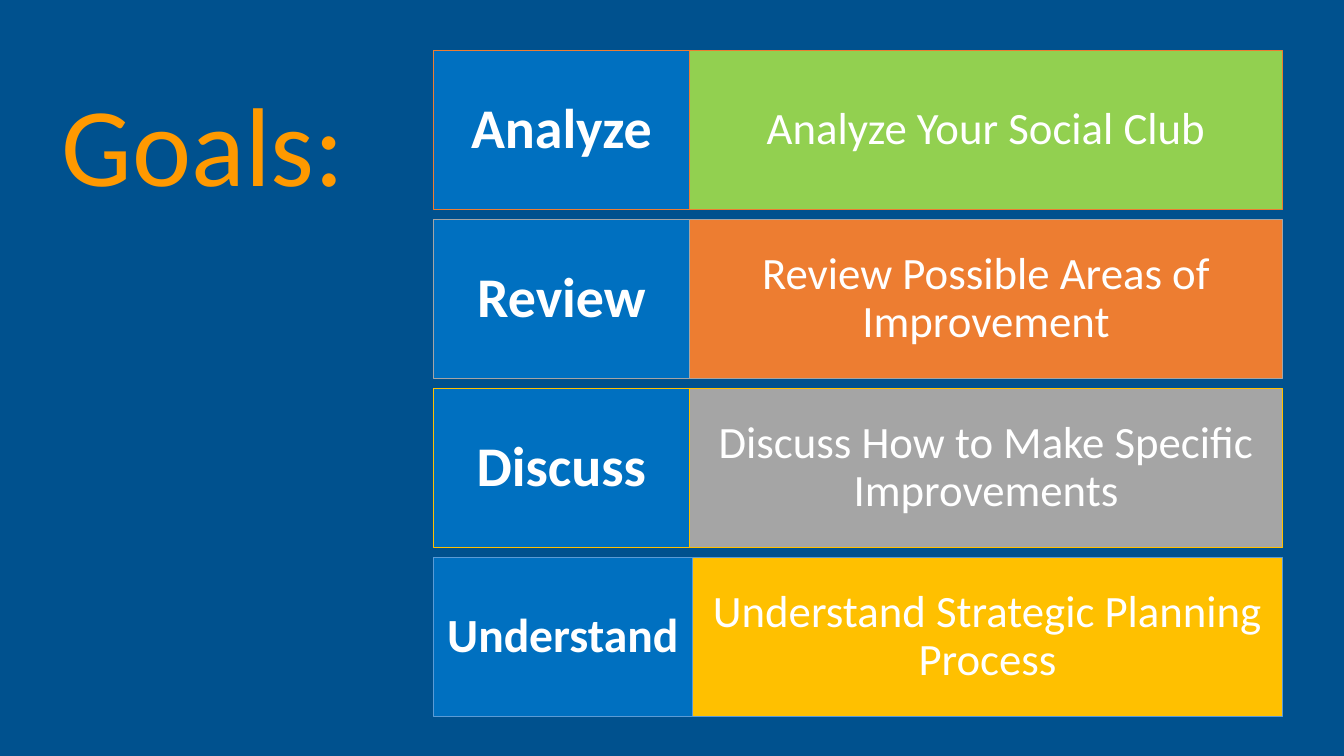
"""Build the goals slide: a title beside four label and description rows."""
from lxml import etree
from pptx import Presentation
from pptx.dml.color import RGBColor
from pptx.enum import shapes, text
from pptx.oxml import ns
from pptx.util import Pt

NAVY = RGBColor(0x00, 0x51, 0x8E)
BLUE = RGBColor(0x00, 0x70, 0xC0)
SKY = RGBColor(0x5B, 0x9B, 0xD5)
GREEN = RGBColor(0x92, 0xD0, 0x50)
ORANGE = RGBColor(0xED, 0x7D, 0x31)
GRAY = RGBColor(0xA5, 0xA5, 0xA5)
GOLD = RGBColor(0xFF, 0xC0, 0x00)
AMBER = RGBColor(0xFF, 0x99, 0x00)
WHITE = RGBColor(0xFF, 0xFF, 0xFF)

ROWS_LEFT, ROWS_TOP, ROWS_RIGHT = 309.6, 36, 916.2
ROW_HEIGHT, ROW_PITCH = 113.8, 120.7

GOALS = [
    ("Analyze", 40, 182.9, "Analyze Your Social Club", GREEN, ORANGE),
    ("Review", 40, 182.9, "Review Possible Areas of Improvement", ORANGE, GRAY),
    ("Discuss", 40, 182.9, "Discuss How to Make Specific Improvements", GRAY, GOLD),
    ("Understand", 34, 185, "Understand Strategic Planning Process", GOLD, SKY),
]


def write_text(shape, content, size, color, alignment, bold=False):
    """Put one vertically centred paragraph into a shape and return its run."""
    frame = shape.text_frame
    frame.word_wrap = True
    frame.vertical_anchor = text.MSO_ANCHOR.MIDDLE
    paragraph = frame.paragraphs[0]
    paragraph.alignment = alignment
    paragraph.line_spacing = 0.9
    run = paragraph.add_run()
    run.text = content
    run.font.name = "Calibri"
    run.font.size = Pt(size)
    run.font.bold = bold
    run.font.color.rgb = color
    return run


def outline_run(run, color, width):
    """Draw a thin line around the letters of a run."""
    line = etree.Element(ns.qn("a:ln"), w=str(int(Pt(width))))
    fill = etree.SubElement(line, ns.qn("a:solidFill"))
    etree.SubElement(fill, ns.qn("a:srgbClr"), val=str(color))
    run.font._element.insert(0, line)


def add_title(slide, content):
    """Add the large outlined title."""
    box = slide.shapes.add_textbox(Pt(28.8), Pt(64.1), Pt(224.6), Pt(86.4))
    run = write_text(box, content, 80, AMBER, text.PP_ALIGN.RIGHT)
    outline_run(run, GOLD, 0.75)


def add_cell(slide, left, top, width, fill, line, insets, content, size, bold=False):
    """Add one filled rectangle with centred white text."""
    shape = slide.shapes.add_shape(
        shapes.MSO_SHAPE.RECTANGLE, Pt(left), Pt(top), Pt(width), Pt(ROW_HEIGHT))
    shape.shadow.inherit = False
    shape.fill.solid()
    shape.fill.fore_color.rgb = fill
    shape.line.color.rgb = line
    shape.line.width = Pt(1)
    frame = shape.text_frame
    side, end = insets
    frame.margin_left = frame.margin_right = Pt(side)
    frame.margin_top = frame.margin_bottom = Pt(end)
    write_text(shape, content, size, WHITE, text.PP_ALIGN.CENTER, bold)


def add_goal(slide, top, label, label_size, label_width, description, fill, line):
    """Add one row: the description, then the label to its left."""
    split = ROWS_LEFT + label_width
    add_cell(slide, split, top, ROWS_RIGHT - split, fill, line, (8, 28.8), description, 32)
    add_cell(slide, ROWS_LEFT, top, label_width, BLUE, line, (5.8, 11.5),
             label, label_size, bold=True)


def main():
    """Build and save the presentation."""
    presentation = Presentation()
    presentation.slide_width = Pt(960)
    presentation.slide_height = Pt(540)
    slide = presentation.slides.add_slide(presentation.slide_layouts[6])
    slide.background.fill.solid()
    slide.background.fill.fore_color.rgb = NAVY
    add_title(slide, "Goals:")
    for index, goal in enumerate(GOALS):
        add_goal(slide, ROWS_TOP + index * ROW_PITCH, *goal)
    presentation.save("out.pptx")


if __name__ == "__main__":
    main()
